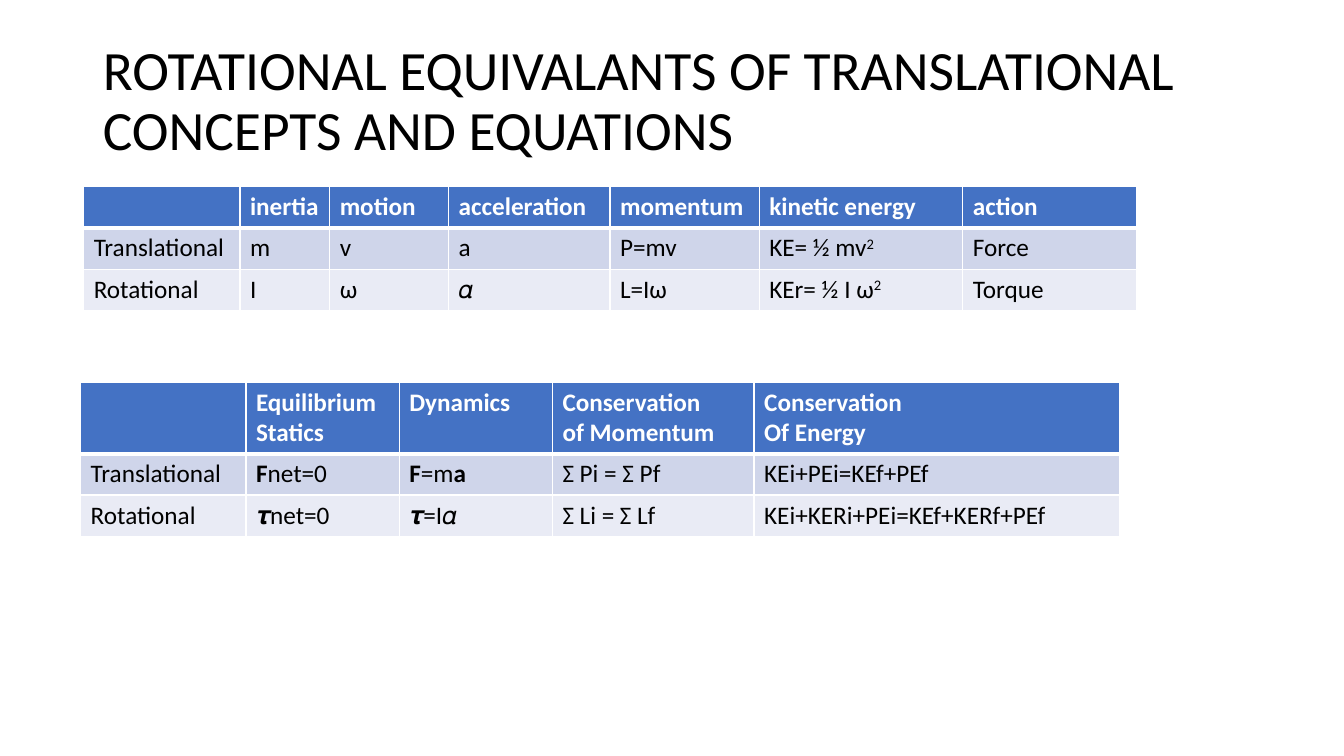
from lxml import etree
from pptx import Presentation
from pptx.dml.color import RGBColor
from pptx.enum.text import MSO_ANCHOR, MSO_AUTO_SIZE, PP_ALIGN
from pptx.oxml.ns import qn
from pptx.util import Inches, Pt

MIDDLE, LEFT, FIXED = MSO_ANCHOR.MIDDLE, PP_ALIGN.LEFT, MSO_AUTO_SIZE.NONE
BLACK = RGBColor(0, 0, 0)
WHITE = RGBColor(255, 255, 255)
BLUE = RGBColor(0x44, 0x72, 0xC4)
BANDS = [RGBColor(0xCF, 0xD5, 0xEA), RGBColor(0xE9, 0xEB, 0xF5)]
FONT = "Calibri"

TITLE = "ROTATIONAL EQUIVALANTS OF TRANSLATIONAL CONCEPTS AND EQUATIONS"
# A cell is a string, or a list of (text, style) runs; "\n" starts a paragraph.
BOLD, SUPER, PLAIN = "bold", "super", "plain"
TABLES = [
    {"at": (0.83, 1.85),
     "cols": [1.55, 0.89, 1.18, 1.6, 1.48, 2.02, 1.72],
     "rows": [0.41, 0.41, 0.41],
     "cells": [
         ["", "inertia", "motion", "acceleration", "momentum",
          "kinetic energy", "action"],
         ["Translational", "m", "v", "a", "P=mv",
          [("KE= ½ mv", PLAIN), ("2", SUPER)], "Force"],
         ["Rotational", "I", "ω", "𝛼", "L=Iω",
          [("KEr= ½ I ω", PLAIN), ("2", SUPER)], "Torque"]]},
    {"at": (0.8, 3.79),
     "cols": [1.64, 1.52, 1.52, 2, 3.63],
     "rows": [0.7, 0.41, 0.41],
     "cells": [
         ["", "Equilibrium\nStatics", "Dynamics",
          "Conservation\nof Momentum", "Conservation\nOf Energy"],
         ["Translational", [("F", BOLD), ("net=0", PLAIN)],
          [("F", BOLD), ("=m", PLAIN), ("a", BOLD)],
          "Σ Pi = Σ Pf", "KEi+PEi=KEf+PEf"],
         ["Rotational", "𝝉net=0", "𝝉=I𝛼", "Σ Li = Σ Lf",
          "KEi+KERi+PEi=KEf+KERf+PEf"]]},
]


def style(font, size, color, bold=False):
    look = {"name": FONT, "size": Pt(size), "bold": bold}
    for key, value in look.items():
        setattr(font, key, value)
    font.color.rgb = color


def border(cell, row):
    """Draw white cell edges, thicker below the header row."""
    props = cell._tc.get_or_add_tcPr()
    widths = {"L": 1, "R": 1, "T": 3 if row == 1 else 1, "B": 3 if row == 0 else 1}
    for side, width in widths.items():
        line = etree.SubElement(props, qn(f"a:ln{side}"), w=str(Pt(width)))
        fill = etree.SubElement(line, qn("a:solidFill"))
        etree.SubElement(fill, qn("a:srgbClr"), val=str(WHITE))


def write(cell, content, head):
    frame = cell.text_frame
    color = WHITE if head else BLACK
    if not content:
        style(frame.paragraphs[0].font, 18, color, head)
        return
    if isinstance(content, str):
        paras = [[(line, PLAIN)] for line in content.split("\n")]
    else:
        paras = [content]
    for i, runs in enumerate(paras):
        para = frame.add_paragraph() if i else frame.paragraphs[0]
        for text, kind in runs:
            run = para.add_run()
            run.text = text
            style(run.font, 18, color, head or kind == BOLD)
            if kind == SUPER:
                run.font._element.set("baseline", "30000")


def add_grid(slide, at, cols, rows, cells):
    left, top = at
    table = slide.shapes.add_table(
        len(rows), len(cols), Inches(left), Inches(top),
        Inches(sum(cols)), Inches(sum(rows))).table
    for col, width in zip(table.columns, cols):
        col.width = Inches(width)
    for r, height in enumerate(rows):
        table.rows[r].height = Inches(height)
        for c, content in enumerate(cells[r]):
            cell = table.cell(r, c)
            border(cell, r)
            cell.fill.solid()
            cell.fill.fore_color.rgb = BANDS[r - 1] if r else BLUE
            write(cell, content, r == 0)


def main():
    deck = Presentation()
    deck.slide_width, deck.slide_height = Inches(13.33), Inches(7.5)
    slide = deck.slides.add_slide(deck.slide_layouts[5])

    title = slide.shapes.title
    box = {"left": 0.92, "top": 0.4, "width": 11.5, "height": 1.23}
    for key, value in box.items():
        setattr(title, key, Inches(value))
    frame = title.text_frame
    frame.text = TITLE
    frame.word_wrap = True
    frame.auto_size = FIXED
    frame.vertical_anchor = MIDDLE
    para = frame.paragraphs[0]
    para.alignment = LEFT
    para.line_spacing = 0.9
    style(para.runs[0].font, 39.6, BLACK)

    for table in TABLES:
        add_grid(slide, **table)
    deck.save("out.pptx")


if __name__ == "__main__":
    main()
